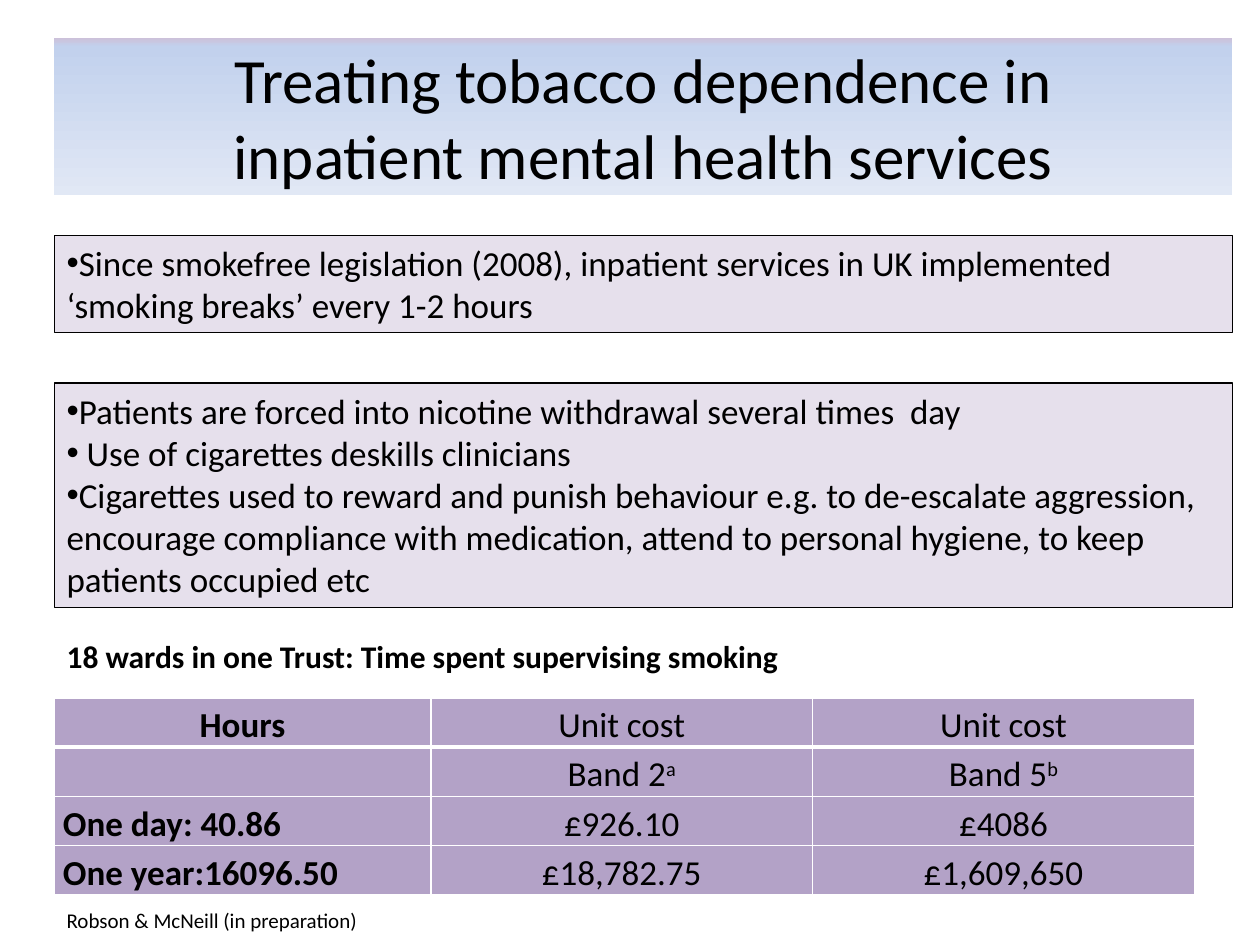
import copy
import pptx
import pptx.util
import pptx.dml.color
import pptx.enum.shapes
import pptx.enum.text
import pptx.oxml.ns
import lxml.etree

Inches, Pt = pptx.util.Inches, pptx.util.Pt
ALIGN = pptx.enum.text.PP_ALIGN
qn = pptx.oxml.ns.qn
LEFT, WIDE = 0.43, 9.35


def color(code):
    return pptx.dml.color.RGBColor.from_string(code)


def style(para, size, bold=False, align=ALIGN.LEFT):
    para.alignment = align
    for run in para.runs:
        run.font.name = "Calibri"
        run.font.size = Pt(size)
        run.font.bold = bold
        run.font.color.rgb = color("000000")


deck = pptx.Presentation()
deck.slide_width, deck.slide_height = Inches(10), Inches(7.5)
slide = deck.slides.add_slide(deck.slide_layouts[6])

# Title and bullet boxes: top, height, lines
boxes = [
    (0.3, 1.25, ["Treating tobacco dependence in", "inpatient mental health services"]),
    (1.87, 0.77, ["Since smokefree legislation (2008), inpatient services in UK implemented "
                  "‘smoking breaks’ every 1-2 hours"]),
    (3.04, 1.78, ["Patients are forced into nicotine withdrawal several times  day",
                  " Use of cigarettes deskills clinicians",
                  "Cigarettes used to reward and punish behaviour e.g. to de-escalate "
                  "aggression, encourage compliance with medication, attend to personal "
                  "hygiene, to keep patients occupied etc"]),
]
for top, high, lines in boxes:
    title = top == 0.3
    box = slide.shapes.add_shape(pptx.enum.shapes.MSO_SHAPE.RECTANGLE, Inches(LEFT),
                                 Inches(top), Inches(WIDE), Inches(high))
    box.shadow.inherit = False
    frame = box.text_frame
    frame.word_wrap = True
    frame.text = "\n".join(lines)
    if title:
        # Three-stop gradient, running downwards
        box.line.fill.background()
        box.fill.gradient()
        box.fill.gradient_angle = 270
        stops = box._element.spPr.find(".//" + qn("a:gsLst"))
        stops.insert(1, copy.deepcopy(stops[0]))
        shades = [(0, "CCC1DA"), (0.06, "C2D1ED"), (1, "E1E8F5")]
        for stop, (place, shade) in zip(box.fill.gradient_stops, shades):
            stop.position = place
            stop.color.rgb = color(shade)
        frame.vertical_anchor = pptx.enum.text.MSO_ANCHOR.MIDDLE
    else:
        box.fill.solid()
        box.fill.fore_color.rgb = color("E6E0EC")
        box.line.color.rgb = color("000000")
        box.line.width = Pt(0.75)
        frame.vertical_anchor = pptx.enum.text.MSO_ANCHOR.TOP
    for para in frame.paragraphs:
        if not title:
            props = para._p.get_or_add_pPr()
            props.set("marL", "0")
            props.set("indent", "0")
            lxml.etree.SubElement(props, qn("a:buFont"), typeface="Arial")
            lxml.etree.SubElement(props, qn("a:buChar"), char="•")
        style(para, 36 if title else 20, align=ALIGN.CENTER if title else ALIGN.LEFT)

# Table heading and source line
notes = [
    (5.01, 7.48, 0.4, "18 wards in one Trust: Time spent supervising smoking", 18, True),
    (7.15, 9.57, 0.3, "Robson & McNeill (in preparation)", 12, False),
]
for top, wide, high, text, size, bold in notes:
    note = slide.shapes.add_textbox(Inches(LEFT), Inches(top), Inches(wide), Inches(high))
    note.text_frame.word_wrap = True
    note.text_frame.text = text
    style(note.text_frame.paragraphs[0], size, bold)

# Cost table; a caret marks superscript
rows = [
    ["Hours", "Unit cost", "Unit cost"],
    ["", "Band 2^a", "Band 5^b"],
    ["One day: 40.86", "£926.10", "£4086"],
    ["One year:16096.50", "£18,782.75", "£1,609,650"],
]
table = slide.shapes.add_table(4, 3, Inches(LEFT), Inches(5.54),
                               Inches(9.05), Inches(1.56)).table
for col, wide in zip(table.columns, [2.99, 3.03, 3.03]):
    col.width = Inches(wide)
for r, row in enumerate(rows):
    table.rows[r].height = Inches(0.39)
    for c, text in enumerate(row):
        cell = table.cell(r, c)
        cell.margin_left = cell.margin_right = Inches(0.07)
        cell.margin_top = cell.margin_bottom = 0
        # White borders, heavier under the header
        props = cell._tc.get_or_add_tcPr()
        for side in "LRTB":
            width = Pt(3 if r == 0 and side == "B" else 1)
            edge = lxml.etree.SubElement(props, qn("a:ln" + side), w=str(width))
            fill = lxml.etree.SubElement(edge, qn("a:solidFill"))
            lxml.etree.SubElement(fill, qn("a:srgbClr"), val="FFFFFF")
        cell.fill.solid()
        cell.fill.fore_color.rgb = color("B3A2C7")
        para = cell.text_frame.paragraphs[0]
        para.line_spacing = 1.15
        for part in text.split("^") if text else []:
            para.add_run().text = part
        style(para, 20, c == 0, ALIGN.LEFT if c == 0 and r else ALIGN.CENTER)
        for run in para.runs[1:]:
            run.font._element.set("baseline", "30000")

deck.save("out.pptx")
